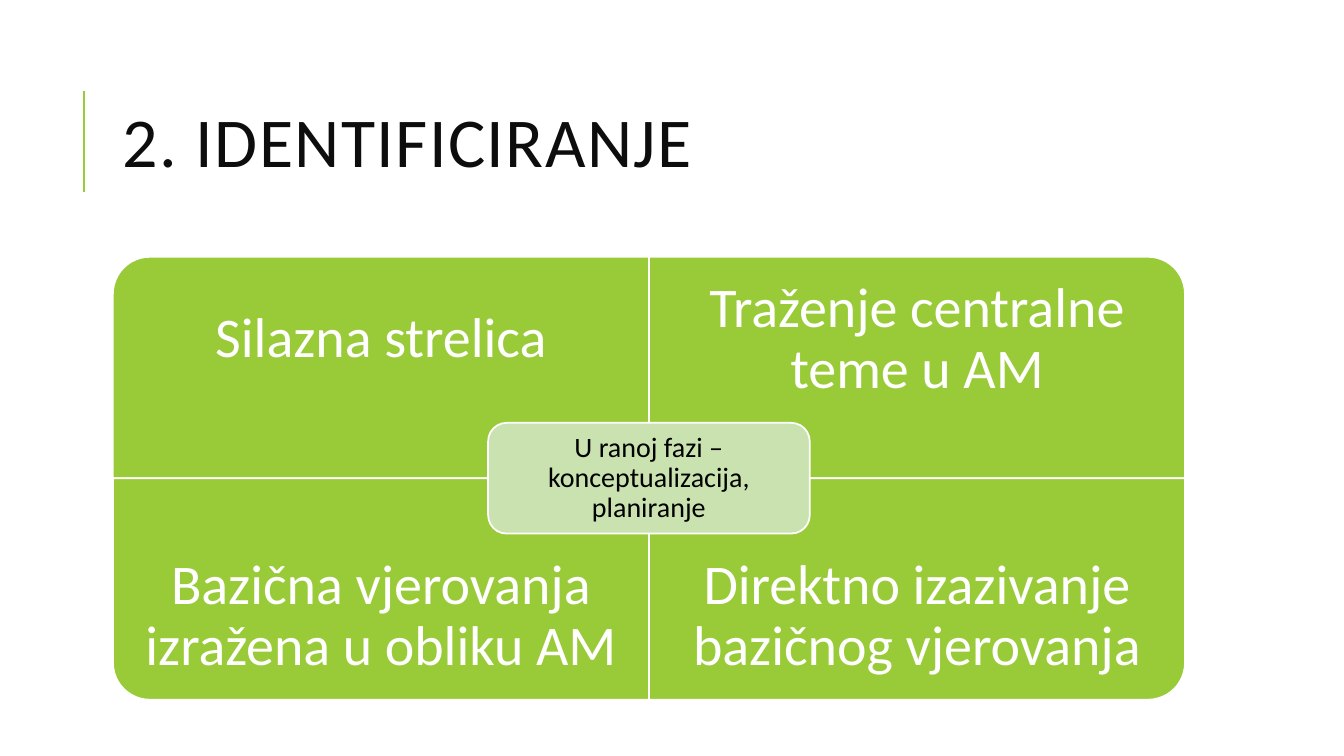
"""Build the slide on ways of identifying core beliefs."""
from dataclasses import dataclass

from lxml.etree import SubElement
from pptx import Presentation
from pptx.dml.color import RGBColor
from pptx.enum.shapes import MSO_CONNECTOR as Connector, MSO_SHAPE as Shape
from pptx.enum.text import MSO_ANCHOR as Anchor, PP_ALIGN as Align
from pptx.oxml.ns import qn
from pptx.shapes.autoshape import Shape as AutoShape
from pptx.slide import Slide
from pptx.util import Pt

GREEN = RGBColor(0x99, 0xCB, 0x38)
PALE_GREEN = RGBColor(0xCA, 0xE2, 0xAF)
WHITE = RGBColor(0xFF, 0xFF, 0xFF)
BLACK = RGBColor(0, 0, 0)
TITLE_INK = RGBColor(0x0D, 0x0D, 0x0D)
FONT = "Calibri"

MATRIX_LEFT, MATRIX_TOP = 80.64, 183.4
QUADRANT_WIDTH, QUADRANT_HEIGHT = 382.9, 158.2
LABEL_HEIGHT = QUADRANT_HEIGHT * 0.75
CENTRE_WIDTH, CENTRE_HEIGHT = QUADRANT_WIDTH * 0.6, QUADRANT_HEIGHT / 2
CENTRE_INSET = 3.86


@dataclass(frozen=True)
class Box:
    left: float
    top: float
    width: float
    height: float

    def lengths(self) -> tuple[Pt, Pt, Pt, Pt]:
        return Pt(self.left), Pt(self.top), Pt(self.width), Pt(self.height)

    def turned(self) -> "Box":
        shift = (self.width - self.height) / 2
        return Box(self.left + shift, self.top - shift, self.height, self.width)

    def inset(self, margin: float) -> "Box":
        return Box(self.left + margin, self.top + margin,
                   self.width - 2 * margin, self.height - 2 * margin)


@dataclass(frozen=True)
class Quadrant:
    label: str
    column: int
    row: int
    rotation: int


@dataclass(frozen=True)
class TextStyle:
    size: float
    colour: RGBColor
    margin: float
    align: Align = Align.CENTER
    line_spacing: float = 0.9
    tracking: int = 0


TITLE_STYLE = TextStyle(50, TITLE_INK, 7.2, Align.LEFT, 0.8, 100)
QUADRANT_STYLE = TextStyle(40, WHITE, 22.4)
CENTRE_STYLE = TextStyle(20, BLACK, 6)

QUADRANTS = (
    Quadrant("Silazna strelica", 0, 0, 270),
    Quadrant("Traženje centralne teme u AM", 1, 0, 0),
    Quadrant("Bazična vjerovanja izražena u obliku AM", 0, 1, 180),
    Quadrant("Direktno izazivanje bazičnog vjerovanja", 1, 1, 90),
)


def add_text(slide: Slide, box: Box, text: str, style: TextStyle) -> None:
    frame = slide.shapes.add_textbox(*box.lengths()).text_frame
    frame.word_wrap = True
    frame.vertical_anchor = Anchor.MIDDLE
    frame.margin_left = frame.margin_right = Pt(style.margin)
    frame.margin_top = frame.margin_bottom = Pt(min(style.margin, 22.4))
    paragraph = frame.paragraphs[0]
    paragraph.alignment = style.align
    paragraph.line_spacing = style.line_spacing
    run = paragraph.add_run()
    run.text = text
    run.font.name = FONT
    run.font.size = Pt(style.size)
    run.font.color.rgb = style.colour
    if style.tracking:
        run.font._element.set("spc", str(style.tracking))


def add_panel(slide: Slide, kind: Shape, box: Box, fill: RGBColor) -> AutoShape:
    panel = slide.shapes.add_shape(kind, *box.lengths())
    panel.shadow.inherit = False
    panel.fill.solid()
    panel.fill.fore_color.rgb = fill
    panel.line.color.rgb = WHITE
    panel.line.width = Pt(1.25)
    return panel


def add_title(slide: Slide) -> None:
    rule = slide.shapes.add_connector(
        Connector.STRAIGHT, Pt(60), Pt(136.8), Pt(60), Pt(64.8))
    rule.line.color.rgb = GREEN
    rule.line.width = Pt(1.5)
    SubElement(rule._element.spPr, qn("a:effectLst"))
    add_text(slide, Box(MATRIX_LEFT, 46.08, 765.36, 118.08),
             "2. IDENTIFICIRANJE", TITLE_STYLE)


def add_quadrant(slide: Slide, quadrant: Quadrant) -> None:
    box = Box(MATRIX_LEFT + quadrant.column * QUADRANT_WIDTH,
              MATRIX_TOP + quadrant.row * QUADRANT_HEIGHT,
              QUADRANT_WIDTH, QUADRANT_HEIGHT)
    sideways = quadrant.rotation % 180 == 90
    panel = add_panel(slide, Shape.ROUND_1_RECTANGLE,
                      box.turned() if sideways else box, GREEN)
    panel.rotation = quadrant.rotation
    label_top = box.top + quadrant.row * (QUADRANT_HEIGHT - LABEL_HEIGHT)
    add_text(slide, Box(box.left, label_top, box.width, LABEL_HEIGHT),
             quadrant.label, QUADRANT_STYLE)


def add_centre(slide: Slide) -> None:
    box = Box(MATRIX_LEFT + QUADRANT_WIDTH - CENTRE_WIDTH / 2,
              MATRIX_TOP + QUADRANT_HEIGHT - CENTRE_HEIGHT / 2,
              CENTRE_WIDTH, CENTRE_HEIGHT)
    add_panel(slide, Shape.ROUNDED_RECTANGLE, box, PALE_GREEN)
    add_text(slide, box.inset(CENTRE_INSET),
             "U ranoj fazi – konceptualizacija, planiranje", CENTRE_STYLE)


def main() -> None:
    deck = Presentation()
    deck.slide_width, deck.slide_height = Pt(960), Pt(540)
    slide = deck.slides.add_slide(deck.slide_layouts[6])
    add_title(slide)
    for quadrant in QUADRANTS:
        add_quadrant(slide, quadrant)
    add_centre(slide)
    deck.save("out.pptx")


if __name__ == "__main__":
    main()
